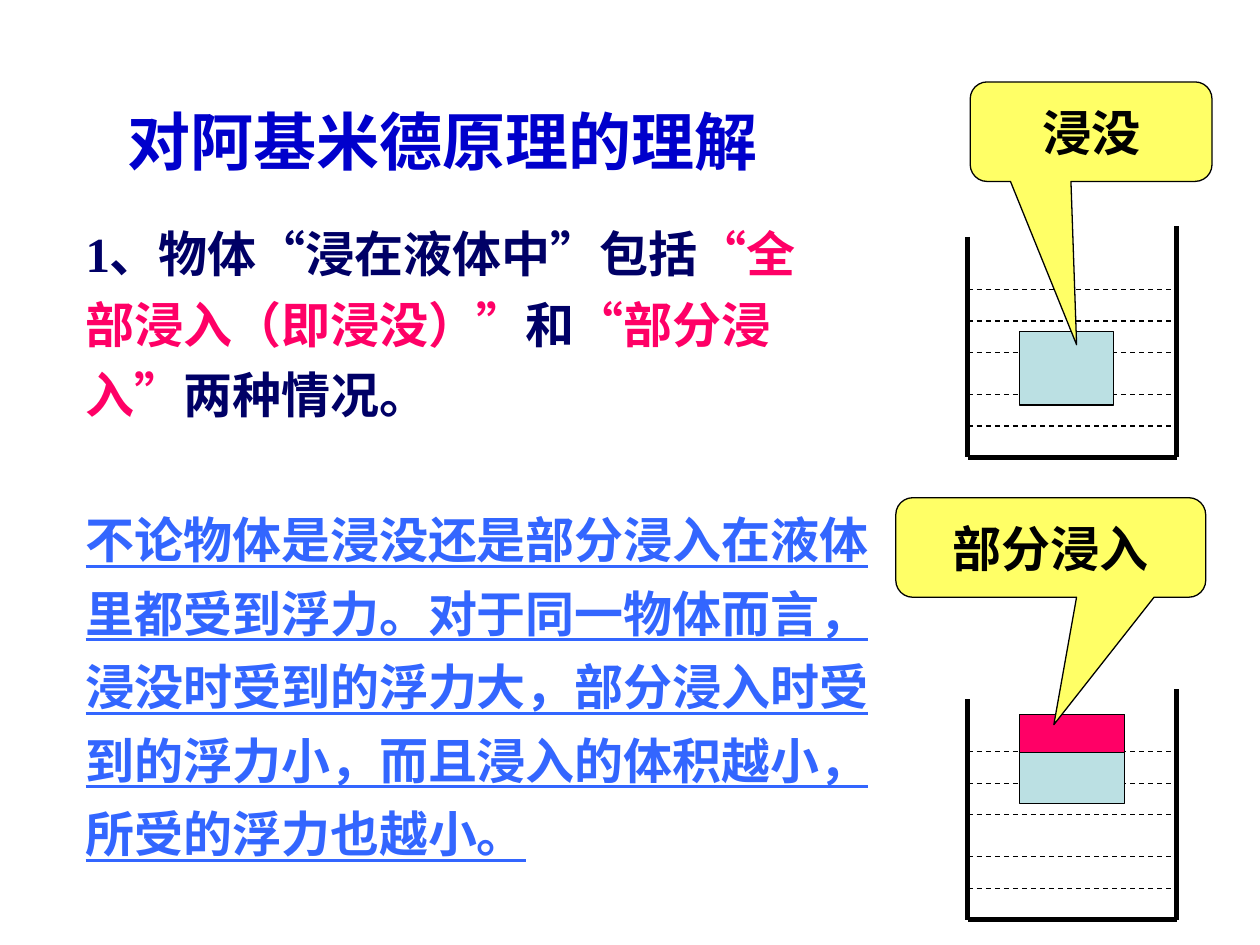
from dataclasses import dataclass

import pptx
import pptx.dml.color
import pptx.enum.dml
import pptx.enum.shapes
import pptx.enum.text
import pptx.oxml
import pptx.util

Pt = pptx.util.Pt
ShapeType = pptx.enum.shapes.MSO_SHAPE
Anchor = pptx.enum.text.MSO_ANCHOR
Align = pptx.enum.text.PP_ALIGN

FONT = "Times New Roman"
BLACK, NAVY, PINK = "000000", "000066", "FF0066"
WATER, YELLOW = "BBE0E3", "FFFF66"

# Beaker geometry, heights measured up from the bottom
BEAKER_LEFT, BEAKER_RIGHT = 553, 672.5
LEFT_WALL, RIGHT_WALL = 126, 132
WATER_LINES = (96, 78, 60, 36, 18)


@dataclass
class Box:
    left: float
    top: float
    width: float
    height: float

    def lengths(self) -> tuple:
        return Pt(self.left), Pt(self.top), Pt(self.width), Pt(self.height)


@dataclass
class Passage:
    box: Box
    line_spacing: float
    runs: list
    underline: bool = False


@dataclass
class Callout:
    box: Box
    text: str
    tip_x: float
    tip_y: float


def color(hex_string: str) -> pptx.dml.color.RGBColor:
    return pptx.dml.color.RGBColor.from_string(hex_string)


def set_font(font, size: float, hex_string: str) -> None:
    font.name = FONT
    font.size = Pt(size)
    font.bold = True
    font.color.rgb = color(hex_string)


def add_title(slide, box: Box, text: str) -> None:
    title = slide.shapes.title
    title.left, title.top, title.width, title.height = box.lengths()
    frame = title.text_frame
    frame.text = text
    frame.word_wrap = True
    frame.auto_size = pptx.enum.text.MSO_AUTO_SIZE.NONE
    frame.vertical_anchor = Anchor.TOP
    paragraph = frame.paragraphs[0]
    paragraph.alignment = Align.LEFT
    set_font(paragraph.font, 36, "0000CC")


def add_passage(slide, passage: Passage) -> None:
    frame = slide.shapes.add_textbox(*passage.box.lengths()).text_frame
    frame.word_wrap = True
    paragraph = frame.paragraphs[0]
    paragraph.line_spacing = passage.line_spacing
    set_font(paragraph.font, 28, passage.runs[0][1])
    for text, hex_string in passage.runs:
        run = paragraph.add_run()
        run.text = text
        set_font(run.font, 28, hex_string)
        if passage.underline:
            run.font.underline = True


def add_line(shapes, start: tuple, end: tuple, width: float, dashed: bool = False) -> None:
    line = shapes.add_connector(
        pptx.enum.shapes.MSO_CONNECTOR.STRAIGHT,
        Pt(start[0]), Pt(start[1]), Pt(end[0]), Pt(end[1]),
    )
    line.line.color.rgb = color(BLACK)
    line.line.width = Pt(width)
    if dashed:
        line.line.dash_style = pptx.enum.dml.MSO_LINE.DASH
    line._element.spPr.append(pptx.oxml.parse_xml(
        '<a:effectLst xmlns:a="http://schemas.openxmlformats.org/drawingml/2006/main"/>'))


def add_beaker(slide, bottom: float) -> None:
    shapes = slide.shapes.add_group_shape().shapes
    corners = [
        (BEAKER_LEFT, bottom - LEFT_WALL),
        (BEAKER_LEFT, bottom),
        (BEAKER_RIGHT, bottom),
        (BEAKER_RIGHT, bottom - RIGHT_WALL),
    ]
    for start, end in zip(corners, corners[1:]):
        add_line(shapes, start, end, 3)
    for height in WATER_LINES:
        y = bottom - height
        add_line(shapes, (BEAKER_LEFT, y), (BEAKER_RIGHT, y), 0.75, dashed=True)


def add_filled_shape(shapes, kind, box: Box, fill: str):
    shape = shapes.add_shape(kind, *box.lengths())
    shape.shadow.inherit = False
    shape.fill.solid()
    shape.fill.fore_color.rgb = color(fill)
    shape.line.color.rgb = color(BLACK)
    shape.line.width = Pt(0.75)
    return shape


def add_callout(slide, callout: Callout) -> None:
    shape = add_filled_shape(
        slide.shapes, ShapeType.ROUNDED_RECTANGULAR_CALLOUT, callout.box, YELLOW)
    for index, value in enumerate((callout.tip_x, callout.tip_y, 0.17)):
        shape.adjustments[index] = value
    frame = shape.text_frame
    frame.text = callout.text
    frame.word_wrap = False
    frame.vertical_anchor = Anchor.MIDDLE
    paragraph = frame.paragraphs[0]
    paragraph.alignment = Align.CENTER
    set_font(paragraph.font, 28, BLACK)


def main() -> None:
    presentation = pptx.Presentation()
    presentation.slide_width, presentation.slide_height = Pt(720), Pt(540)
    slide = presentation.slides.add_slide(presentation.slide_layouts[5])

    # Title and text
    add_title(slide, Box(65.5, 54.7, 386, 51), "对阿基米德原理的理解")
    passages = [
        Passage(Box(41.8, 117.4, 444.2, 128.2), 1.2, [
            ("1、物体“浸在液体中”包括", NAVY),
            ("“全部浸入（即浸没）”", PINK),
            ("和", NAVY),
            ("“部分浸入”", PINK),
            ("两种情况。", NAVY),
        ]),
        Passage(Box(41.8, 279.4, 480.2, 217.4), 1.25, [
            ("不论物体是浸没还是部分浸入在液体里都受到浮力。对于同一物体而言，"
             "浸没时受到的浮力大，部分浸入时受到的浮力小，而且浸入的体积越小，"
             "所受的浮力也越小。", "3366FF"),
        ], underline=True),
    ]
    for passage in passages:
        add_passage(slide, passage)

    # Beakers with water
    for bottom in (261.4, 525.6):
        add_beaker(slide, bottom)

    # Fully submerged block
    add_filled_shape(slide.shapes, ShapeType.RECTANGLE, Box(582.5, 189.4, 54, 42), WATER)
    add_callout(slide, Callout(Box(554.4, 46.8, 138.2, 56.9), "浸没", -0.06, 2.14))

    # Partly submerged block, its dry part on top
    block = slide.shapes.add_group_shape().shapes
    for height, fill in ((51, WATER), (22, PINK)):
        add_filled_shape(block, ShapeType.RECTANGLE, Box(582.5, 408.2, 60, height), fill)
    add_callout(slide, Callout(Box(511.9, 284.4, 177.1, 56.9), "部分浸入", 0.01, 1.78))

    presentation.save("out.pptx")


if __name__ == "__main__":
    main()
